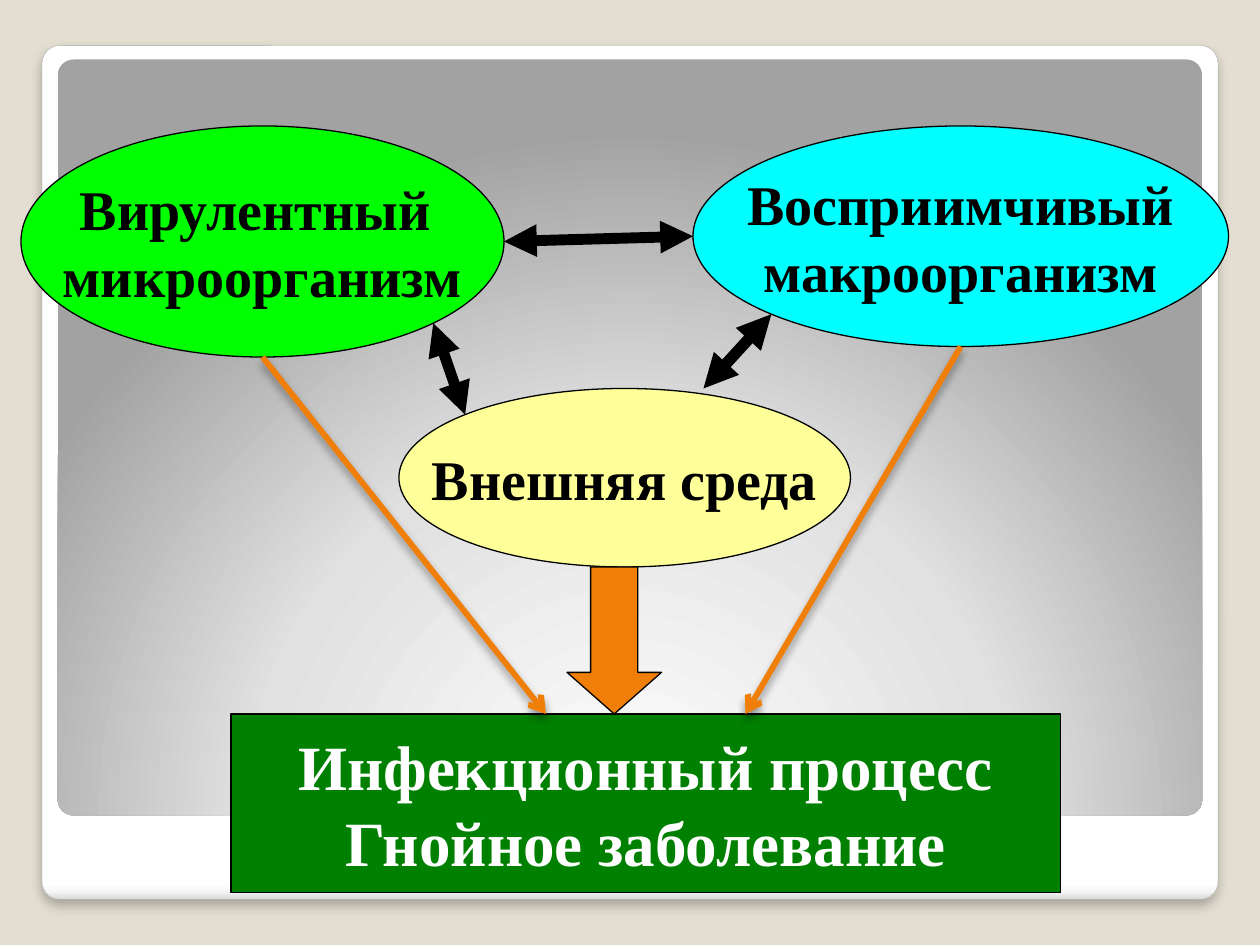
import math
import pptx
import pptx.dml.color
import pptx.enum.shapes
import pptx.enum.text
import pptx.oxml
import pptx.util

Pt = pptx.util.Pt
SHAPES = pptx.enum.shapes.MSO_SHAPE
NS = 'xmlns:a="http://schemas.openxmlformats.org/drawingml/2006/main"'
BLACK, WHITE, ORANGE = "000000", "FFFFFF", "F07F09"

# Content: box (left, top, width, height), fill, text colour, size, lines
MICROBE = (12, 72, 276, 132)
ENVIRONMENT = (228, 222, 258, 102)
HOST = (396, 72, 306, 126)
OUTCOME = (132, 408, 474, 102)
NODES = [
    (SHAPES.OVAL, MICROBE, "00FF00", BLACK, 32, ["Вирулентный ", "микроорганизм"]),
    (SHAPES.OVAL, ENVIRONMENT, "FFFF99", BLACK, 32, ["Внешняя среда"]),
    (SHAPES.OVAL, HOST, "00FFFF", BLACK, 32, ["Восприимчивый", "макроорганизм"]),
    (SHAPES.RECTANGLE, OUTCOME, "008000", WHITE, 36,
     ["Инфекционный процесс", "Гнойное заболевание"]),
]

# Panels: box, gradient stops, gradient direction, outline, shadow
FRAME_STOPS = [(0, WHITE), (98, WHITE), (99, "F7F7F7"), (100, "DADADA")]
INNER_STOPS = [(0, WHITE), (55, "E1E1E1"), (100, "A2A2A2")]
LINEAR = '<a:lin ang="5400000" scaled="0"/>'
RADIAL = ('<a:path path="circle"><a:fillToRect l="50000" t="175000" '
          'r="50000" b="-75000"/></a:path>')
PANELS = [
    ((24, 26, 672, 488), FRAME_STOPS, LINEAR, "A4A4A4", (25, 6, 4)),
    ((33, 34, 654, 432), INNER_STOPS, RADIAL, None, None),
]


def rgb(value):
    return pptx.dml.color.RGBColor.from_string(value)


def rim(box, degrees):
    """Point on an ellipse, clockwise from its right end."""
    left, top, width, height = box
    angle = math.radians(degrees)
    return (left + width / 2 * (1 + math.cos(angle)),
            top + height / 2 * (1 + math.sin(angle)))


# Links: from, to, colour, width, head, tail, shadow
LINKS = [
    (rim(MICROBE, 0), rim(HOST, 180), BLACK, 6.25, "triangle", "triangle", None),
    (rim(MICROBE, 45), rim(ENVIRONMENT, 225), BLACK, 6.25, "triangle", "triangle", None),
    (rim(HOST, 135), (402, ENVIRONMENT[1]), BLACK, 6.5, "triangle", "triangle", None),
    (rim(MICROBE, 90), (312, OUTCOME[1]), ORANGE, 3.35, "none", "arrow", (40, 5.2, 3)),
    (rim(HOST, 90), (426, OUTCOME[1]), ORANGE, 3.35, "none", "arrow", (40, 5.2, 3)),
]


def effects(shadow):
    """Effect list with a downward shadow (opacity %, blur, distance) or none."""
    inner = ""
    if shadow:
        opacity, blur, distance = shadow
        inner = (f'<a:outerShdw blurRad="{Pt(blur)}" dist="{Pt(distance)}" dir="5400000" '
                 f'algn="t" rotWithShape="0"><a:srgbClr val="{BLACK}">'
                 f'<a:alpha val="{opacity * 1000}"/></a:srgbClr></a:outerShdw>')
    return pptx.oxml.parse_xml(f"<a:effectLst {NS}>{inner}</a:effectLst>")


def gradient(stops, direction):
    marks = "".join(f'<a:gs pos="{at * 1000}"><a:srgbClr val="{colour}"/></a:gs>'
                    for at, colour in stops)
    return pptx.oxml.parse_xml(
        f'<a:gradFill {NS} rotWithShape="1"><a:gsLst>{marks}</a:gsLst>{direction}</a:gradFill>')


def add_block(slide, kind, box, fill, outline=BLACK, width=0.75):
    block = slide.shapes.add_shape(kind, *map(Pt, box))
    block.shadow.inherit = False
    block.fill.solid()
    block.fill.fore_color.rgb = rgb(fill)
    if outline:
        block.line.color.rgb = rgb(outline)
        block.line.width = Pt(width)
    else:
        block.line.fill.background()
    return block


def add_panel(slide, box, stops, direction, outline, shadow):
    panel = add_block(slide, SHAPES.ROUNDED_RECTANGLE, box, WHITE, outline, 0.16)
    panel.adjustments[0] = 0.021
    properties = panel._element.spPr
    for tag, new in (("solidFill", gradient(stops, direction)),
                     ("effectLst", effects(shadow))):
        properties.replace(properties.find(pptx.oxml.ns.qn("a:" + tag)), new)


def add_node(slide, kind, box, fill, colour, size, lines):
    frame = add_block(slide, kind, box, fill).text_frame
    frame.word_wrap = False
    frame.vertical_anchor = pptx.enum.text.MSO_ANCHOR.MIDDLE
    font_format = {"name": "Times New Roman", "size": Pt(size), "bold": True}
    for number, line in enumerate(lines):
        paragraph = frame.add_paragraph() if number else frame.paragraphs[0]
        paragraph.alignment = pptx.enum.text.PP_ALIGN.CENTER
        run = paragraph.add_run()
        run.text = line
        for key, value in font_format.items():
            setattr(run.font, key, value)
        run.font.color.rgb = rgb(colour)


def add_link(slide, start, end, colour, width, head, tail, shadow):
    link = slide.shapes.add_connector(
        pptx.enum.shapes.MSO_CONNECTOR.STRAIGHT, *(Pt(value) for value in start + end))
    link.line.color.rgb = rgb(colour)
    link.line.width = Pt(width)
    properties = link._element.spPr
    stroke = properties.find(pptx.oxml.ns.qn("a:ln"))
    for tag, style in (("headEnd", head), ("tailEnd", tail)):
        stroke.append(pptx.oxml.parse_xml(f'<a:{tag} {NS} type="{style}"/>'))
    properties.append(effects(shadow))


def main():
    deck = pptx.Presentation()
    deck.slide_width, deck.slide_height = Pt(720), Pt(540)
    slide = deck.slides.add_slide(deck.slide_layouts[6])

    # Backdrop
    slide.background.fill.solid()
    slide.background.fill.fore_color.rgb = rgb("E3DED1")
    for panel in PANELS:
        add_panel(slide, *panel)

    # Factors and outcome
    for node in NODES:
        add_node(slide, *node)

    # Block arrow from the environment down to the outcome
    bottom = ENVIRONMENT[1] + ENVIRONMENT[3]
    down_arrow = add_block(slide, SHAPES.DOWN_ARROW,
                           (324, bottom, 54, OUTCOME[1] - bottom), ORANGE)
    down_arrow.adjustments[0] = 0.5
    down_arrow.adjustments[1] = 0.44

    # Interactions and paths to the outcome
    for link in LINKS:
        add_link(slide, *link)

    deck.save("out.pptx")


if __name__ == "__main__":
    main()
